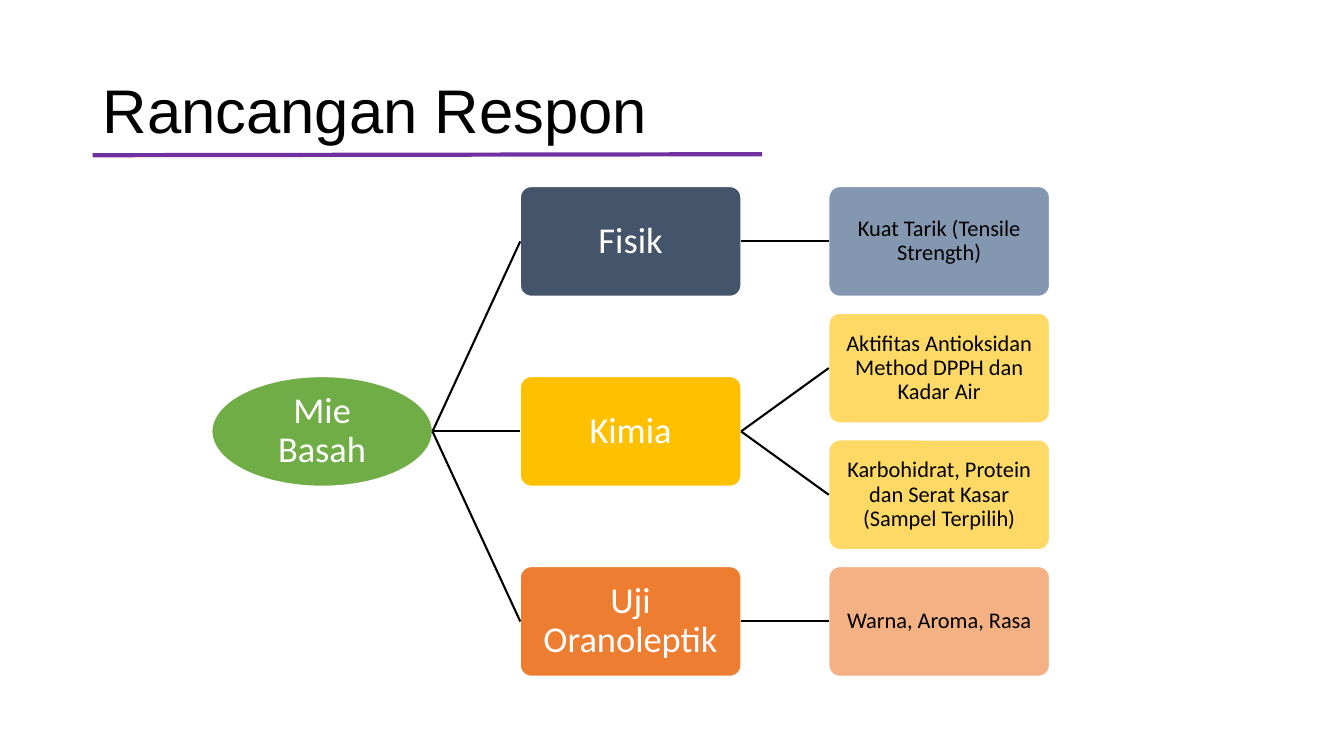
from pptx import Presentation
from pptx.dml.color import RGBColor
from pptx.enum.shapes import MSO_CONNECTOR, MSO_SHAPE
from pptx.enum.text import MSO_ANCHOR, PP_ALIGN
from pptx.util import Inches, Pt
from lxml import etree

COLORS = {
    "black": "000000", "white": "FFFFFF", "purple": "7030A0", "green": "70AD47",
    "slate": "44546A", "light slate": "8497B0", "gold": "FFC000",
    "light gold": "FFD966", "orange": "ED7D31", "light orange": "F4B183",
}
DRAWING = "http://schemas.openxmlformats.org/drawingml/2006/main"
LEFT, TOP = 2.1, 1.85
COLUMN_STEP, ROW_STEP = 3.06, 3.77 / 3
WIDTH, HEIGHT = 2.19, 1.09

presentation = Presentation()
presentation.slide_width = Inches(13.33)
presentation.slide_height = Inches(7.5)
slide = presentation.slides.add_slide(presentation.slide_layouts[6])


def write_text(shape, text, size, font, color, align, inset):
    text_frame = shape.text_frame
    text_frame.text = text
    text_frame.word_wrap = True
    text_frame.vertical_anchor = MSO_ANCHOR.MIDDLE
    text_frame.margin_left = text_frame.margin_right = Inches(inset)
    text_frame.margin_top = text_frame.margin_bottom = Inches(inset)
    paragraph = text_frame.paragraphs[0]
    paragraph.alignment = align
    paragraph.line_spacing = 0.9
    run = paragraph.runs[0]
    run.font.size = Pt(size)
    run.font.name = font
    run.font.color.rgb = RGBColor.from_string(COLORS[color])


def add_line(start_x, start_y, end_x, end_y, color, width):
    connector = slide.shapes.add_connector(
        MSO_CONNECTOR.STRAIGHT,
        Inches(start_x), Inches(start_y), Inches(end_x), Inches(end_y))
    connector.line.color.rgb = RGBColor.from_string(COLORS[color])
    connector.line.width = Pt(width)
    etree.SubElement(connector._element.spPr, f"{{{DRAWING}}}effectLst")
    return connector


title = slide.shapes.add_textbox(Inches(0.92), Inches(0.4), Inches(11.5), Inches(1.45))
write_text(title, "Rancangan Respon", 44, "Arial", "black", PP_ALIGN.LEFT, 0.1)
title.text_frame.margin_top = title.text_frame.margin_bottom = Inches(0.05)
add_line(0.92, 1.54, 7.56, 1.53, "purple", 3)

nodes = [
    ("Mie Basah", 0, 1.5, "green", None),
    ("Fisik", 1, 0, "slate", "Mie Basah"),
    ("Kuat Tarik (Tensile Strength)", 2, 0, "light slate", "Fisik"),
    ("Kimia", 1, 1.5, "gold", "Mie Basah"),
    ("Aktifitas Antioksidan Method DPPH dan Kadar Air", 2, 1, "light gold", "Kimia"),
    ("Karbohidrat, Protein dan Serat Kasar (Sampel Terpilih)", 2, 2, "light gold", "Kimia"),
    ("Uji Oranoleptik", 1, 3, "orange", "Mie Basah"),
    ("Warna, Aroma, Rasa", 2, 3, "light orange", "Uji Oranoleptik"),
]
placed = {}
for text, column, row, fill, parent in nodes:
    left = LEFT + column * COLUMN_STEP
    top = TOP + row * ROW_STEP
    kind = MSO_SHAPE.ROUNDED_RECTANGLE if parent else MSO_SHAPE.OVAL
    shape = slide.shapes.add_shape(
        kind, Inches(left), Inches(top), Inches(WIDTH), Inches(HEIGHT))
    shape.shadow.inherit = False
    shape.fill.solid()
    shape.fill.fore_color.rgb = RGBColor.from_string(COLORS[fill])
    shape.line.color.rgb = RGBColor.from_string(COLORS["white"])
    shape.line.width = Pt(1)
    if column == 2:
        write_text(shape, text, 16, "Calibri", "black", PP_ALIGN.CENTER, 0.01)
    else:
        write_text(shape, text, 26, "Calibri", "white", PP_ALIGN.CENTER, 0.02)
    placed[text] = (shape, left + WIDTH, top + HEIGHT / 2)
    if parent:
        shape.adjustments[0] = 0.1
        parent_shape, start_x, start_y = placed[parent]
        branch = add_line(start_x, start_y, left, top + HEIGHT / 2, "black", 1.5)
        if column == 2:
            branch.begin_connect(parent_shape, 3)
        branch.end_connect(shape, 1)

presentation.save("out.pptx")
